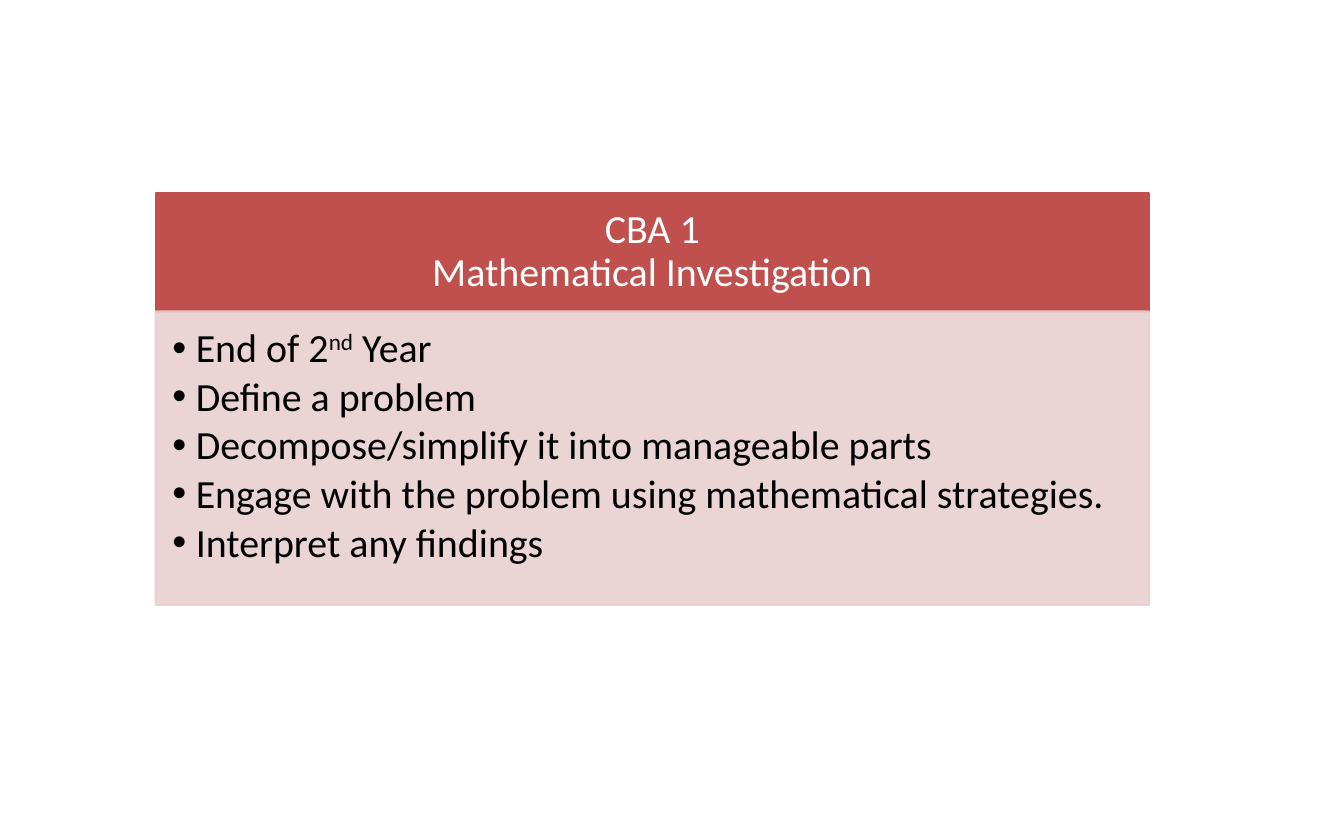
from dataclasses import dataclass

from lxml import etree
from pptx import Presentation
from pptx.dml.color import RGBColor
from pptx.enum.text import MSO_ANCHOR, MSO_AUTO_SIZE, PP_ALIGN
from pptx.oxml.ns import qn
from pptx.shapes.placeholder import SlidePlaceholder
from pptx.util import Inches, Pt

MIDDLE, TOP = MSO_ANCHOR.MIDDLE, MSO_ANCHOR.TOP
CENTER, LEFT = PP_ALIGN.CENTER, PP_ALIGN.LEFT
NO_FIT = MSO_AUTO_SIZE.NONE

FONT_NAME = "Calibri"
FONT_SIZE = 38
PANEL_LEFT = 2.06
PANEL_WIDTH = 13.14
BULLET_INDENT = 0.31


@dataclass(frozen=True)
class Panel:
    top: float
    height: float
    fill: str
    opacity: int
    text_color: str
    anchor: MSO_ANCHOR
    align: PP_ALIGN
    insets: tuple[float, float, float, float]


@dataclass(frozen=True)
class Span:
    text: str
    raised: bool = False


HEADING = Panel(2.55, 1.58, "C0504D", 100, "FFFFFF", MIDDLE, CENTER, (0.3, 0.17, 0.3, 0.17))
DETAILS = Panel(4.12, 3.88, "E8D0D0", 90, "000000", TOP, LEFT, (0.22, 0.22, 0.3, 0.33))

HEADING_LINES = ("CBA 1", "Mathematical Investigation")
TASKS = (
    (Span("End of 2"), Span("nd", raised=True), Span(" Year")),
    (Span("Define a problem"),),
    (Span("Decompose/simplify it into manageable parts"),),
    (Span("Engage with the problem using mathematical strategies."),),
    (Span("Interpret any findings"),),
)


def color(value: str) -> RGBColor:
    return RGBColor.from_string(value)


def format_panel(box: SlidePlaceholder, panel: Panel) -> None:
    box.left, box.top = Inches(PANEL_LEFT), Inches(panel.top)
    box.width, box.height = Inches(PANEL_WIDTH), Inches(panel.height)
    box.fill.solid()
    box.fill.fore_color.rgb = color(panel.fill)
    box.line.fill.solid()
    box.line.fill.fore_color.rgb = color(panel.fill)
    box.line.width = Pt(2)
    if panel.opacity < 100:
        for paint in box._element.spPr.iter(qn("a:srgbClr")):
            etree.SubElement(paint, qn("a:alpha")).set("val", str(panel.opacity * 1000))
    frame = box.text_frame
    frame.auto_size = NO_FIT
    frame.word_wrap = True
    frame.vertical_anchor = panel.anchor
    left, top, right, bottom = panel.insets
    frame.margin_left, frame.margin_top = Inches(left), Inches(top)
    frame.margin_right, frame.margin_bottom = Inches(right), Inches(bottom)


def format_paragraph(para, panel: Panel) -> None:
    para.alignment = panel.align
    para.line_spacing = 0.9
    para.space_before = Pt(0)


def add_bullet(para) -> None:
    properties = para._p.get_or_add_pPr()
    properties.set("marL", str(Inches(BULLET_INDENT)))
    properties.set("indent", str(-Inches(BULLET_INDENT)))
    etree.SubElement(properties, qn("a:buChar")).set("char", "•")


def add_span(para, span: Span, panel: Panel) -> None:
    run = para.add_run()
    run.text = span.text
    run.font.name = FONT_NAME
    run.font.size = Pt(FONT_SIZE)
    run.font.color.rgb = color(panel.text_color)
    if span.raised:
        run._r.get_or_add_rPr().set("baseline", "30000")


def fill_heading(box: SlidePlaceholder) -> None:
    format_panel(box, HEADING)
    para = box.text_frame.paragraphs[0]
    format_paragraph(para, HEADING)
    for index, line in enumerate(HEADING_LINES):
        if index:
            para.add_line_break()
        add_span(para, Span(line), HEADING)


def fill_details(box: SlidePlaceholder) -> None:
    format_panel(box, DETAILS)
    frame = box.text_frame
    for index, spans in enumerate(TASKS):
        para = frame.add_paragraph() if index else frame.paragraphs[0]
        add_bullet(para)
        format_paragraph(para, DETAILS)
        para.space_after = Pt(5.25)
        for span in spans:
            add_span(para, span, DETAILS)


def main() -> None:
    deck = Presentation()
    deck.slide_width, deck.slide_height = Inches(17.78), Inches(11.11)
    page = deck.slides.add_slide(deck.slide_layouts.get_by_name("Title and Content"))
    fill_heading(page.shapes.title)
    fill_details(page.placeholders[1])
    deck.save("out.pptx")


if __name__ == "__main__":
    main()
